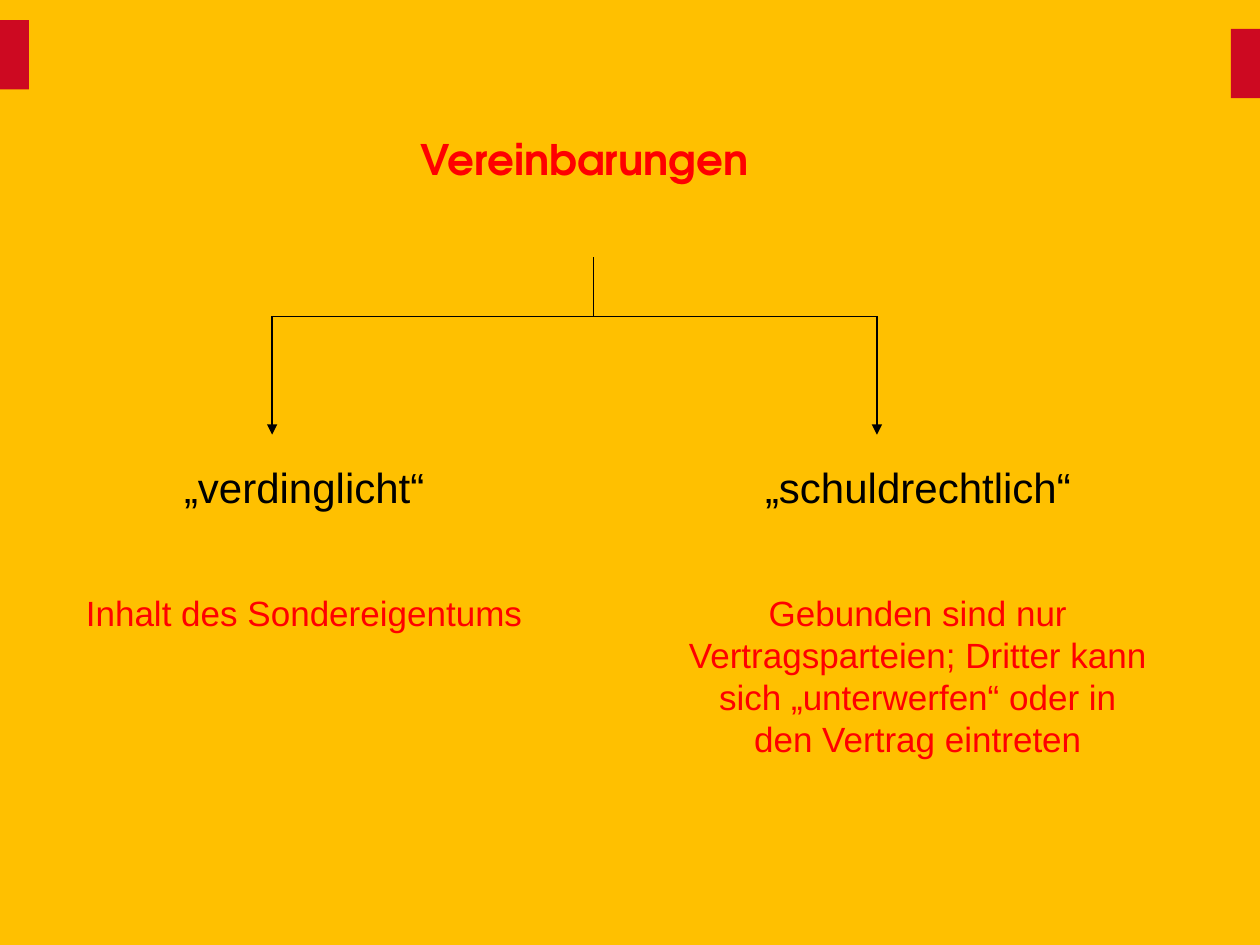
from lxml import etree
from pptx import Presentation
from pptx.dml.color import RGBColor
from pptx.enum.shapes import MSO_CONNECTOR, MSO_SHAPE
from pptx.enum.text import MSO_ANCHOR, MSO_AUTO_SIZE, PP_ALIGN
from pptx.oxml.ns import qn
from pptx.util import Inches, Pt

STRAIGHT = MSO_CONNECTOR.STRAIGHT
RECTANGLE = MSO_SHAPE.RECTANGLE
CENTER = PP_ALIGN.CENTER
MIDDLE = MSO_ANCHOR.MIDDLE
NO_AUTOFIT = MSO_AUTO_SIZE.NONE

COLORS = {
    "background": "FFC000",
    "marker": "CD0921",
    "accent": "FF0000",
    "ink": "000000",
}
WIDTH, HEIGHT = 10, 7.5
MARKER_WIDTH, MARKER_HEIGHT = 0.23, 0.55
BRANCH_LEFT, BRANCH_RIGHT, STEM = 2.16, 6.96, 4.71
STEM_TOP, BRANCH_TOP, BRANCH_BOTTOM = 2.04, 2.51, 3.45
COLUMN_TOP = 3.61


def color(name):
    return RGBColor.from_string(COLORS[name])


def inches(*lengths):
    return [Inches(length) for length in lengths]


def format_paragraph(paragraph, size, color_name, font_name="Arial", bold=False):
    paragraph.alignment = CENTER
    paragraph.font.name = font_name
    paragraph.font.size = Pt(size)
    paragraph.font.bold = bold
    paragraph.font.color.rgb = color(color_name)


def add_marker(slide, left, top):
    marker = slide.shapes.add_shape(
        RECTANGLE, *inches(left, top, MARKER_WIDTH, MARKER_HEIGHT))
    marker.shadow.inherit = False
    marker.fill.solid()
    marker.fill.fore_color.rgb = color("marker")
    marker.line.fill.background()


def set_title(slide, text):
    title = slide.shapes.title
    title.left, title.top, title.width, title.height = inches(1.66, 1.01, 5.96, 0.5)
    frame = title.text_frame
    frame.text = text
    frame.auto_size = NO_AUTOFIT
    frame.vertical_anchor = MIDDLE
    format_paragraph(frame.paragraphs[0], 24, "accent", "TeX Gyre Adventor", True)


def add_line(slide, start, end, arrow=False):
    connector = slide.shapes.add_connector(STRAIGHT, *inches(*start, *end))
    connector.line.color.rgb = color("ink")
    connector.line.width = Pt(0.75)
    properties = connector._element.spPr
    if arrow:
        etree.SubElement(properties.find(qn("a:ln")), qn("a:tailEnd"), type="triangle")
    etree.SubElement(properties, qn("a:effectLst"))


def add_column(slide, left, width, height, heading, detail):
    box = slide.shapes.add_textbox(*inches(left, COLUMN_TOP, width, height))
    frame = box.text_frame
    frame.word_wrap = True
    frame.text = heading
    format_paragraph(frame.paragraphs[0], 24, "ink")
    paragraph = frame.add_paragraph()
    paragraph.text = detail
    paragraph.space_before = Pt(46)
    format_paragraph(paragraph, 20, "accent")


def main():
    presentation = Presentation()
    presentation.slide_width, presentation.slide_height = inches(WIDTH, HEIGHT)
    slide = presentation.slides.add_slide(
        presentation.slide_layouts.get_by_name("Title Only"))
    slide.background.fill.solid()
    slide.background.fill.fore_color.rgb = color("background")

    add_marker(slide, WIDTH - MARKER_WIDTH, 0.23)
    add_marker(slide, 0, 0.16)
    set_title(slide, "Vereinbarungen")

    add_line(slide, (BRANCH_LEFT, BRANCH_TOP), (BRANCH_RIGHT, BRANCH_TOP))
    add_line(slide, (STEM, BRANCH_TOP), (STEM, STEM_TOP))
    for branch in (BRANCH_LEFT, BRANCH_RIGHT):
        add_line(slide, (branch, BRANCH_TOP), (branch, BRANCH_BOTTOM), arrow=True)

    add_column(slide, 0.2, 4.43, 1.5, "„verdinglicht“", "Inhalt des Sondereigentums")
    add_column(slide, 5.36, 3.85, 2.5, "„schuldrechtlich“",
               "Gebunden sind nur Vertragsparteien; Dritter kann sich "
               "„unterwerfen“ oder in den Vertrag eintreten")

    presentation.save("out.pptx")


if __name__ == "__main__":
    main()
